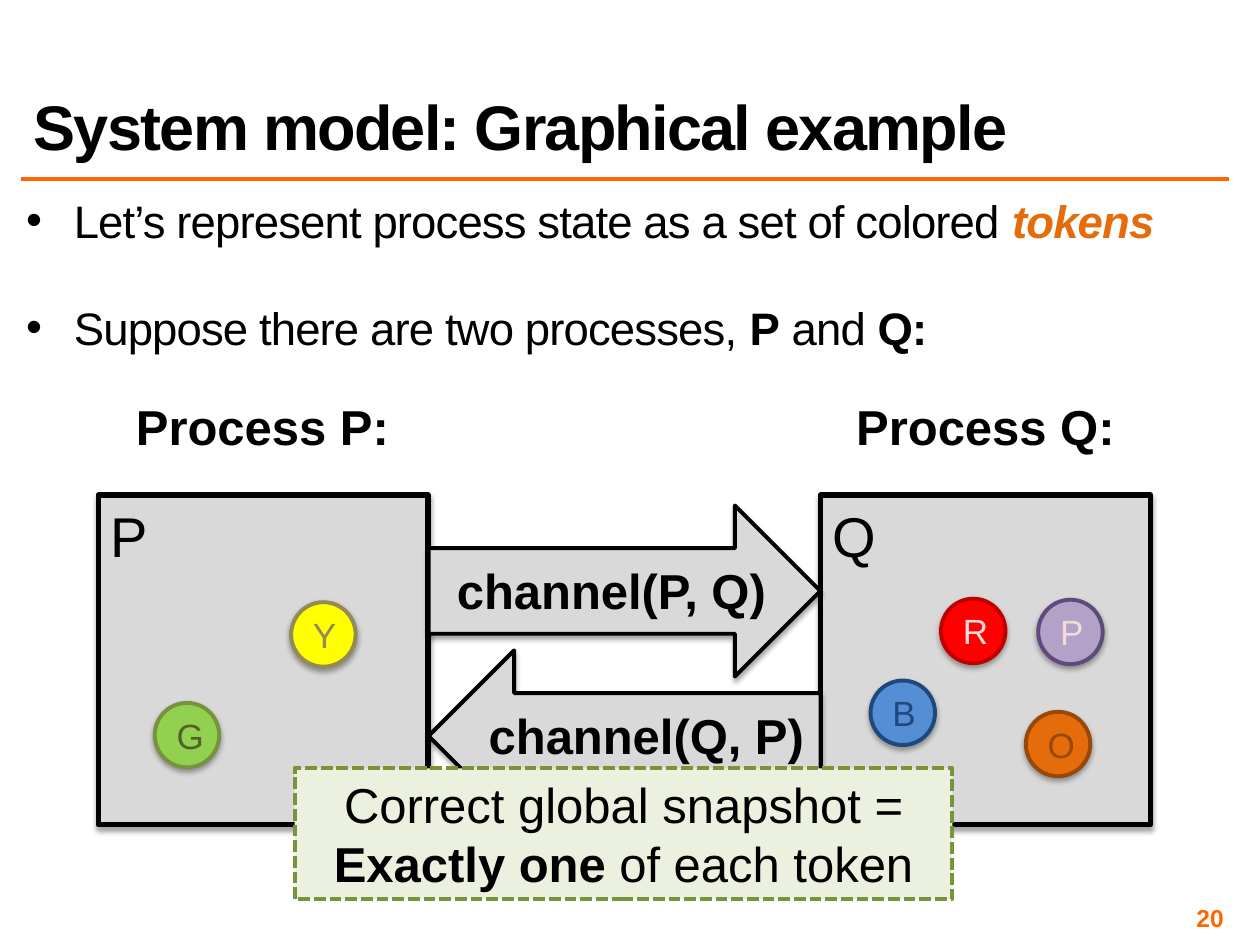
import dataclasses

import lxml.etree
import pptx
import pptx.dml.color
import pptx.enum.dml
import pptx.enum.shapes
import pptx.enum.text
import pptx.oxml.ns
import pptx.util

Cm, Pt = pptx.util.Cm, pptx.util.Pt
SHAPE = pptx.enum.shapes.MSO_SHAPE
ALIGN = pptx.enum.text.PP_ALIGN
ANCHOR = pptx.enum.text.MSO_ANCHOR
qn = pptx.oxml.ns.qn


@dataclasses.dataclass(frozen=True)
class Theme:
    """Colours and type sizes of the slide."""
    font: str = "Arial"
    ink: str = "000000"
    accent: str = "FF6600"
    emphasis: str = "E46C0A"
    panel: str = "D9D9D9"
    note_fill: str = "EBF1DE"
    note_line: str = "77933C"
    title: int = 36
    process: int = 32
    label: int = 28
    body: int = 26
    token: int = 20
    number: int = 14


def rgb(value):
    """Turn a hex string into a colour."""
    return pptx.dml.color.RGBColor.from_string(value)


def write(p, text, size, color, font, bold=False, italic=False, spacing=0):
    """Add one formatted run to a paragraph."""
    r = p.add_run()
    r.text = text
    r.font.name, r.font.size = font, Pt(size)
    r.font.bold, r.font.italic = bold, italic
    r.font.color.rgb = rgb(color)
    if spacing:
        r._r.get_or_add_rPr().set("spc", str(int(spacing * 100)))


class SlideBuilder:
    """Draws styled elements on the current slide."""

    def __init__(self, slide, theme):
        """Keep the slide and its theme."""
        self.s, self.theme = slide, theme

    def fill_text(self, p, runs, size, color=None, align=ALIGN.LEFT, **fmt):
        """Write (text, format) runs into an aligned paragraph."""
        p.alignment = align
        for text, extra in runs:
            style = {"color": color or self.theme.ink, **fmt, **extra}
            write(p, text, size, font=self.theme.font, **style)

    def text(self, box, runs, size, wrap=True, anchor=ANCHOR.TOP, inset=None, **fmt):
        """Add a text box and return its text frame."""
        tf = self.s.shapes.add_textbox(*map(Cm, box)).text_frame
        tf.word_wrap, tf.vertical_anchor = wrap, anchor
        if inset is not None:
            tf.margin_left = tf.margin_right = tf.margin_top = tf.margin_bottom = Cm(inset)
        self.fill_text(tf.paragraphs[0], runs, size, **fmt)
        return tf

    def bullets(self, box, items):
        """Add a bulleted list of (space before, runs) items."""
        tf = self.text(box, [], self.theme.body, inset=0.1)
        for i, (space, runs) in enumerate(items):
            p = tf.add_paragraph() if i else tf.paragraphs[0]
            self.fill_text(p, runs, self.theme.body, spacing=-0.5)
            p.line_spacing, p.space_before = 0.8, Pt(space)
            pPr = p._p.get_or_add_pPr()
            pPr.set("marL", str(Cm(0.96)))
            pPr.set("indent", str(-Cm(0.96)))
            lxml.etree.SubElement(pPr, qn("a:buFont")).set("typeface", self.theme.font)
            lxml.etree.SubElement(pPr, qn("a:buChar")).set("char", "•")

    def shape(self, kind, box, fill, line, width, shadow=True):
        """Add a filled, outlined preset shape."""
        sp = self.s.shapes.add_shape(kind, *map(Cm, box))
        sp.fill.solid()
        sp.fill.fore_color.rgb = rgb(fill)
        sp.line.color.rgb, sp.line.width = rgb(line), Pt(width)
        sp.shadow.inherit = False
        if shadow:
            effects = sp._element.spPr.find(qn("a:effectLst"))
            outer = lxml.etree.SubElement(
                effects, qn("a:outerShdw"), blurRad=str(Pt(3.1)), dist=str(Pt(1.8)),
                dir="5400000", rotWithShape="0")
            color = lxml.etree.SubElement(outer, qn("a:srgbClr"), val=self.theme.ink)
            lxml.etree.SubElement(color, qn("a:alpha"), val="35000")
        return sp

    def process(self, left, name):
        """Add a process square with its name in the corner."""
        t = self.theme
        sp = self.shape(SHAPE.RECTANGLE, (left, 9.98, 6.65, 6.65), t.panel, t.ink, 3)
        sp.text_frame.vertical_anchor = ANCHOR.TOP
        self.fill_text(sp.text_frame.paragraphs[0], [(name, {})], t.process)

    def channel(self, top, rotation):
        """Add a block arrow between the processes."""
        t = self.theme
        sp = self.shape(SHAPE.RIGHT_ARROW, (8.64, top, 7.9, 3.45), t.panel, t.ink, 2.25)
        sp.rotation = rotation

    def label(self, left, top, width, text):
        """Add a bold centred label."""
        self.text((left, top, width, 1.45), [(text, {})], self.theme.label,
                  wrap=False, align=ALIGN.CENTER, bold=True)

    def token(self, left, top, name, fill, line, color):
        """Add a round coloured token."""
        sp = self.shape(SHAPE.OVAL, (left, top, 1.3, 1.3), fill, line, 2.25)
        sp.text_frame.vertical_anchor = ANCHOR.MIDDLE
        self.fill_text(sp.text_frame.paragraphs[0], [(name, {})], self.theme.token,
                       color, ALIGN.CENTER)

    def note(self, box, runs):
        """Add a dashed note box."""
        t = self.theme
        sp = self.shape(SHAPE.RECTANGLE, box, t.note_fill, t.note_line, 2.25, shadow=False)
        sp.line.dash_style = pptx.enum.dml.MSO_LINE.SQUARE_DOT
        sp.text_frame.word_wrap = True
        sp.text_frame.vertical_anchor = ANCHOR.TOP
        self.fill_text(sp.text_frame.paragraphs[0], runs, t.label, align=ALIGN.CENTER)

    def rule(self, left, right, y):
        """Add the horizontal line below the title."""
        line = self.s.shapes.add_connector(
            pptx.enum.shapes.MSO_CONNECTOR.STRAIGHT, Cm(left), Cm(y), Cm(right), Cm(y))
        line.line.color.rgb, line.line.width = rgb(self.theme.accent), Pt(2)
        lxml.etree.SubElement(line._element.spPr, qn("a:effectLst"))


def main():
    """Build and save the slide."""
    prs = pptx.Presentation()
    prs.slide_width, prs.slide_height = Cm(25.4), Cm(19.05)
    t = Theme()
    b = SlideBuilder(prs.slides.add_slide(prs.slide_layouts[6]), t)
    bold = {"bold": True}

    b.rule(0.43, 24.77, 3.61)
    b.bullets((0.43, 4.01, 24.33, 3.84), [
        (5, [("Let’s represent process state as a set of colored ", {}),
             ("tokens", {"color": t.emphasis, "bold": True, "italic": True})]),
        (36, [("Suppose there are two processes, ", {}), ("P", bold),
              (" and ", {}), ("Q:", bold)]),
    ])
    b.text((18.85, 18.21, 5.92, 0.58), [("20", bold)], t.number, color=t.accent,
           align=ALIGN.RIGHT, anchor=ANCHOR.MIDDLE, inset=0.1)
    title = b.text((0.43, 0.43, 24.33, 2.97), [("System model: Graphical example", bold)],
                   t.title, anchor=ANCHOR.BOTTOM, spacing=-1)
    title.paragraphs[0].line_spacing = 0.8

    for left, name in ((1.98, "P"), (16.54, "Q")):
        b.process(left, name)
    for top, rotation in ((10.19, 0), (13.11, 180)):
        b.channel(top, rotation)
    for label in ((2.46, 7.87, 5.66, "Process P:"), (16.97, 7.87, 5.79, "Process Q:"),
                  (8.92, 11.18, 6.81, "channel(P, Q)"), (9.55, 14.1, 6.96, "channel(Q, P)")):
        b.label(*label)
    for token in ((18.97, 12.07, "R", "FF0000", "C00000", "F2DCDB"),
                  (3.12, 14.17, "G", "92D050", "77933C", "4F6228"),
                  (17.55, 13.72, "B", "558ED5", "1F497D", "1F497D"),
                  (5.87, 12.14, "Y", "FFFF00", "948A54", "948A54"),
                  (20.68, 14.35, "O", "E46C0A", "984807", "984807"),
                  (20.93, 12.09, "P", "B3A2C7", "604A7B", "F2DCDB")):
        b.token(*token)
    b.note((5.94, 15.49, 13.26, 2.64), [("Correct global snapshot = ", {}),
                                      ("Exactly one ", bold), ("of each token", {})])
    prs.save("out.pptx")


if __name__ == "__main__":
    main()
